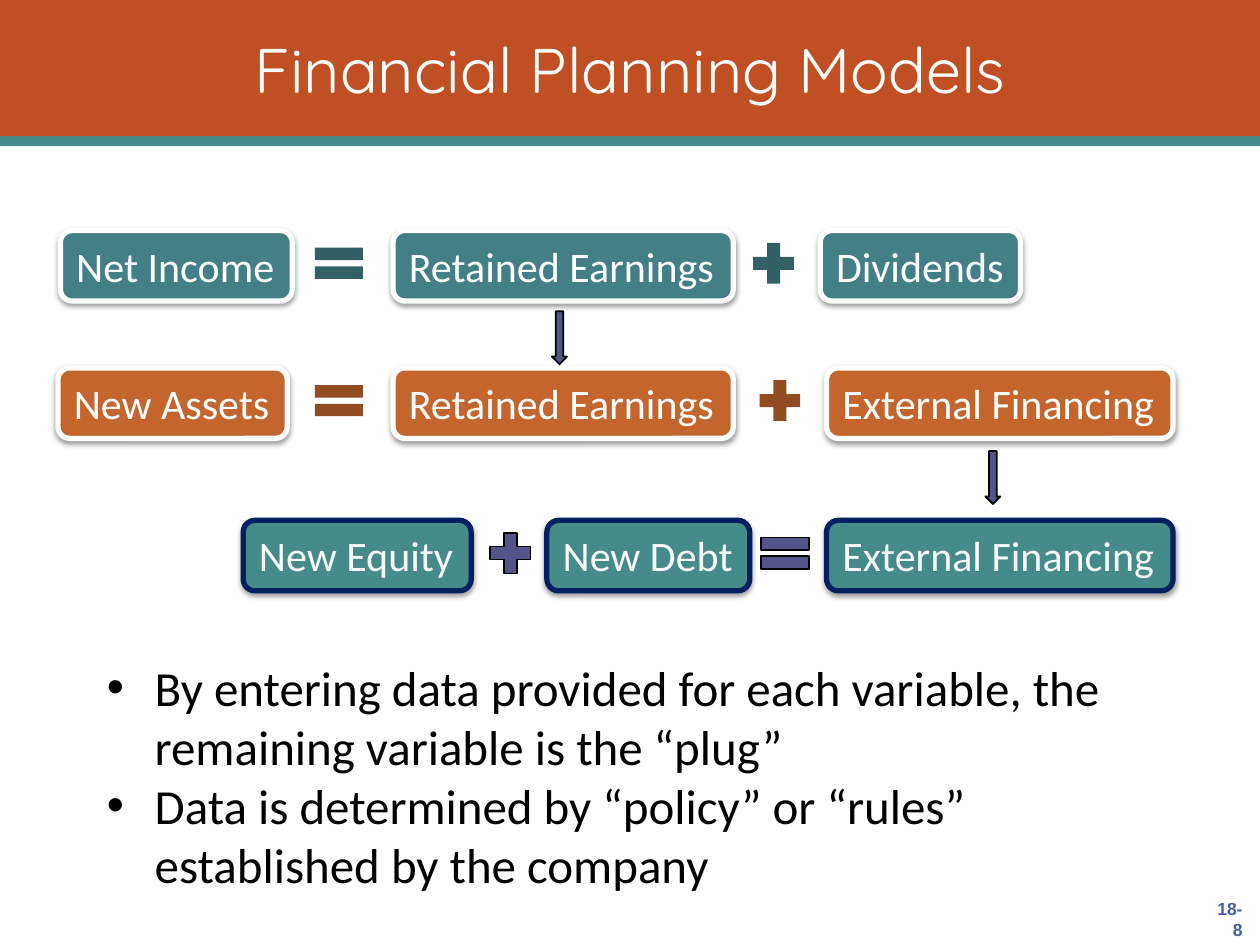
from lxml.etree import SubElement
from pptx import Presentation
from pptx.dml.color import RGBColor
from pptx.enum.shapes import MSO_SHAPE as Preset
from pptx.enum.text import MSO_ANCHOR as Anchor, MSO_AUTO_SIZE as AutoSize, PP_ALIGN as Align
from pptx.oxml.ns import qn
from pptx.util import Inches, Pt

COLORS = {
    "white": "FFFFFF", "black": "000000", "off_white": "F8F8F8",
    "rust": "C05023", "sea": "458B8A", "teal": "438086", "dark_teal": "326065",
    "orange": "C4652D", "brown": "934C22", "navy": "002060",
    "violet": "53548A", "number": "455EA0",
}
TITLE = "Financial Planning Models"
PAGE_NUMBER = "18- 8"
BULLETS = [
    "By entering data provided for each variable, the remaining variable is the “plug”",
    "Data is determined by “policy” or “rules” established by the company",
]
BANDS = [(1.08, 0.08, "sea"), (0, 1.08, "rust")]
EQUATIONS = [
    {"top": 1.83, "fill": "teal", "line": "white", "text": "white",
     "sign": "dark_teal", "sign_line": None,
     "boxes": [("Net Income", 0.48, 1.84), ("Retained Earnings", 3.12, 2.7),
               ("Dividends", 6.51, 1.59)],
     "signs": [("=", 2.43), ("+", 5.92)]},
    {"top": 2.92, "fill": "orange", "line": "white", "text": "white",
     "sign": "brown", "sign_line": None,
     "boxes": [("New Assets", 0.46, 1.82), ("Retained Earnings", 3.12, 2.7),
               ("External Financing", 6.56, 2.75)],
     "signs": [("=", 2.43), ("+", 5.97)]},
    {"top": 4.13, "fill": "sea", "line": "navy", "text": "off_white",
     "sign": "violet", "sign_line": "black",
     "boxes": [("New Equity", 1.93, 1.81), ("New Debt", 4.34, 1.61),
               ("External Financing", 6.56, 2.75)],
     "signs": [("+", 3.83), ("=", 5.97)]},
]
SIGNS = {"=": (Preset.MATH_EQUAL, 0.52, 0.42), "+": (Preset.MATH_PLUS, 0.44, 0.44)}
ARROWS = [(4.38, 2.47), (7.82, 3.58)]
BOX_HEIGHT = 0.56
SIGN_CENTER = 0.26


def color(name):
    return RGBColor.from_string(COLORS[name])


def add_run(paragraph, text, size, font, color_name, bold=False):
    run = paragraph.add_run()
    run.text = text
    run.font.size = Pt(size)
    run.font.name = font
    run.font.bold = bold
    run.font.color.rgb = color(color_name)


def add_shape(slide, preset, place, fill, line=None, line_width=1):
    shape = slide.shapes.add_shape(preset, *map(Inches, place))
    shape.shadow.inherit = False
    shape.fill.solid()
    shape.fill.fore_color.rgb = color(fill)
    if line:
        shape.line.color.rgb = color(line)
        shape.line.width = Pt(line_width)
    else:
        shape.line.fill.background()
    return shape


def add_shadow(shape):
    effects = shape._element.spPr.find(qn("a:effectLst"))
    shadow = SubElement(effects, qn("a:outerShdw"), blurRad=str(Pt(3.1)),
                        dist=str(Pt(1.6)), dir="5400000", rotWithShape="0")
    shade = SubElement(shadow, qn("a:srgbClr"), val=COLORS["black"])
    SubElement(shade, qn("a:alpha"), val="38000")


def add_box(slide, text, left, width, row):
    place = (left, row["top"], width, BOX_HEIGHT)
    shape = add_shape(slide, Preset.ROUNDED_RECTANGLE, place, row["fill"], row["line"], 3)
    add_shadow(shape)
    frame = shape.text_frame
    frame.word_wrap = False
    frame.auto_size = AutoSize.SHAPE_TO_FIT_TEXT
    frame.vertical_anchor = Anchor.TOP
    paragraph = frame.paragraphs[0]
    paragraph.alignment = Align.LEFT
    add_run(paragraph, text, 24, "Calibri", row["text"])


def add_title(slide):
    title = slide.shapes.title
    title.left, title.top, title.width, title.height = map(Inches, (0.75, 0.08, 8.5, 0.92))
    slide.shapes._spTree.append(title._element)
    frame = title.text_frame
    frame.auto_size = AutoSize.NONE
    frame.vertical_anchor = Anchor.MIDDLE
    frame.paragraphs[0].alignment = Align.CENTER
    add_run(frame.paragraphs[0], TITLE, 36, "Quicksand", "white")


def add_page_number(slide):
    frame = slide.shapes.add_textbox(*map(Inches, (9.46, 7.08, 0.5, 0.42))).text_frame
    frame.word_wrap = False
    frame.vertical_anchor = Anchor.MIDDLE
    frame.paragraphs[0].alignment = Align.RIGHT
    add_run(frame.paragraphs[0], PAGE_NUMBER, 10, "Arial", "number", bold=True)


def add_bullets(slide):
    frame = slide.shapes.add_textbox(*map(Inches, (0.75, 5.17, 8.57, 1.99))).text_frame
    frame.word_wrap = True
    frame.auto_size = AutoSize.SHAPE_TO_FIT_TEXT
    indent = Inches(0.38)
    for index, text in enumerate(BULLETS):
        paragraph = frame.add_paragraph() if index else frame.paragraphs[0]
        properties = paragraph._p.get_or_add_pPr()
        properties.set("marL", str(indent))
        properties.set("indent", str(-indent))
        SubElement(properties, qn("a:buFont"), typeface="Arial")
        SubElement(properties, qn("a:buChar"), char="•")
        add_run(paragraph, text, 28, "Calibri", "black")


def main():
    """Build the financial planning models slide."""
    presentation = Presentation()
    presentation.slide_width, presentation.slide_height = Inches(10), Inches(7.5)
    slide = presentation.slides.add_slide(presentation.slide_layouts[5])
    for top, height, fill in BANDS:
        add_shape(slide, Preset.RECTANGLE, (0, top, 10, height), fill)
    add_page_number(slide)
    add_title(slide)
    add_bullets(slide)
    for row in EQUATIONS:
        for text, left, width in row["boxes"]:
            add_box(slide, text, left, width, row)
        for sign, left in row["signs"]:
            preset, width, height = SIGNS[sign]
            top = row["top"] + SIGN_CENTER - height / 2
            add_shape(slide, preset, (left, top, width, height), row["sign"], row["sign_line"])
    for left, top in ARROWS:
        add_shape(slide, Preset.DOWN_ARROW, (left, top, 0.12, 0.42), "violet", "black")
    presentation.save("out.pptx")


if __name__ == "__main__":
    main()
